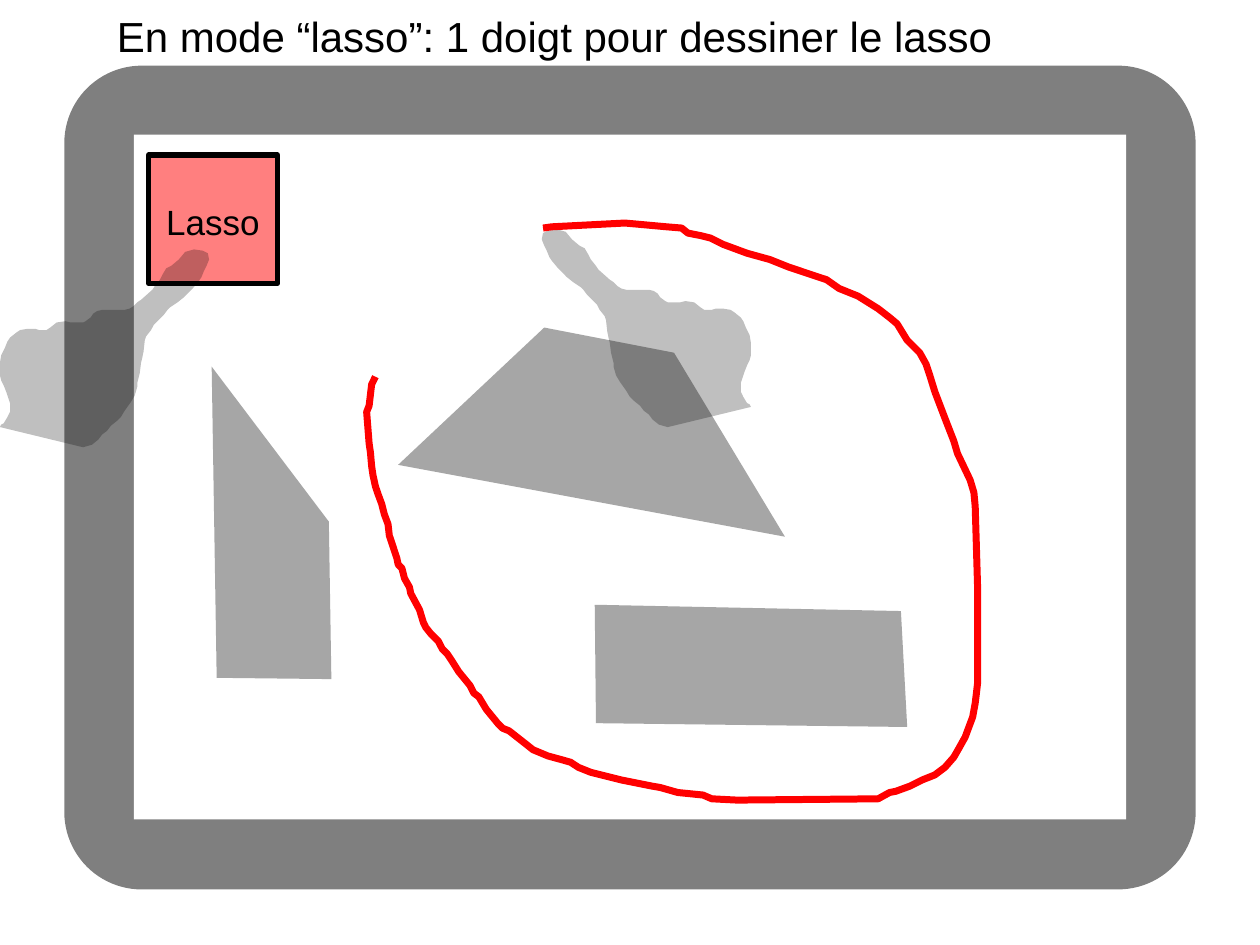
"""Builds the tablet slide on drawing a lasso with one finger."""

import dataclasses
import typing

import lxml.etree
import pptx
import pptx.dml.color
import pptx.enum.shapes
import pptx.enum.text
import pptx.oxml.ns
import pptx.util

Pt = pptx.util.Pt
SHAPE = pptx.enum.shapes.MSO_SHAPE
ALIGN = pptx.enum.text.PP_ALIGN
Points = list[tuple[int, int]]


@dataclasses.dataclass(frozen=True)
class Theme:
    black: str = "000000"
    white: str = "FFFFFF"
    red: str = "FF0000"
    grey: str = "A6A6A6"
    font: str = "Arial"
    title_size: float = 24
    label_size: float = 20
    border: float = 3
    stroke: float = 4
    grid_step: float = 0.72


@dataclasses.dataclass(frozen=True)
class Style:
    fill: typing.Optional[str] = None
    opacity: int = 100
    line: typing.Optional[str] = None
    width: float = 0


@dataclasses.dataclass(frozen=True)
class Panel:
    preset: SHAPE
    box: tuple[float, float, float, float]
    style: Style
    corner: typing.Optional[float] = None


@dataclasses.dataclass(frozen=True)
class Label:
    text: str
    box: tuple[float, float, float, float]
    size: float
    align: ALIGN
    wrap: bool
    side_inset: float = 7.2


@dataclasses.dataclass(frozen=True)
class Outline:
    points: Points
    style: Style
    closed: bool = True


THEME = Theme()
HAND_STYLE = Style(THEME.black, 25)
OBJECT_STYLE = Style(THEME.grey)

TABLET = [
    Panel(SHAPE.ROUNDED_RECTANGLE, (36.75, 37.5, 646.5, 470.75), Style(THEME.black, 50), 0.094),
    Panel(SHAPE.RECTANGLE, (76.5, 77, 567, 391.25), Style(THEME.white)),
]
BUTTON = Panel(SHAPE.RECTANGLE, (85, 88.5, 73.5, 73.5),
               Style(THEME.red, 50, THEME.black, THEME.border))
BUTTON_LABEL = Label("Lasso", (88, 111, 67.5, 31.5), THEME.label_size, ALIGN.CENTER, False, 2)
TITLE = Label("En mode “lasso”: 1 doigt pour dessiner le lasso", (59.75, 2.5, 620, 36.5),
              THEME.title_size, ALIGN.LEFT, True)

DRAWN_OBJECTS = [
    [(172, 538), (168, 291), (261, 414), (263, 539)],
    [(316, 369), (623, 426), (535, 280), (432, 260)],
    [(472, 480), (473, 574), (720, 577), (715, 485)],
]
RIGHT_HAND = [
    (530, 339), (523, 337), (518, 333), (515, 329), (511, 326), (508, 322), (503, 318),
    (500, 315), (497, 310), (492, 303), (489, 298), (487, 291), (487, 288), (485, 280),
    (484, 272), (483, 268), (482, 263), (481, 254), (480, 251), (476, 246), (474, 242),
    (469, 237), (466, 234), (463, 230), (461, 228), (455, 224), (450, 220), (447, 217),
    (443, 213), (438, 207), (436, 204), (434, 199), (432, 195), (430, 190), (431, 185),
    (435, 183), (442, 182), (449, 184), (454, 190), (460, 195), (464, 197), (467, 202),
    (469, 206), (473, 211), (475, 214), (484, 222), (487, 224), (490, 227), (493, 229),
    (497, 230), (506, 230), (515, 230), (519, 231), (522, 233), (524, 236), (528, 239),
    (530, 240), (534, 240), (540, 240), (544, 239), (551, 240), (556, 244), (559, 246),
    (565, 246), (568, 245), (574, 245), (580, 246), (583, 248), (588, 252), (590, 255),
    (592, 260), (595, 266), (596, 272), (596, 282), (595, 286), (593, 290), (591, 295),
    (589, 301), (588, 304), (588, 311), (590, 315), (593, 320), (595, 321), (596, 323),
]
LEFT_HAND = [(596 - x, y + 16) for x, y in RIGHT_HAND]
LASSO = [
    (298, 299), (295, 305), (293, 322), (291, 327), (293, 352), (294, 359), (295, 370),
    (296, 377), (298, 386), (300, 392), (303, 400), (305, 408), (308, 416), (309, 425),
    (311, 431), (315, 443), (316, 448), (319, 451), (321, 459), (325, 466), (326, 471),
    (333, 484), (336, 494), (338, 498), (342, 503), (348, 509), (351, 515), (355, 519),
    (359, 525), (364, 533), (373, 544), (376, 550), (380, 553), (386, 563), (395, 574),
    (399, 578), (404, 580), (418, 591), (423, 595), (435, 600), (446, 603), (453, 605),
    (459, 609), (469, 613), (473, 614), (493, 619), (518, 624), (524, 625), (538, 629),
    (558, 631), (565, 634), (585, 635), (697, 634), (706, 629), (711, 628), (722, 624),
    (732, 619), (742, 615), (750, 609), (757, 601), (761, 594), (766, 585), (772, 569),
    (774, 558), (775, 550), (776, 541), (776, 470), (774, 402), (773, 391), (770, 381),
    (760, 360), (757, 350), (750, 332), (742, 311), (738, 298), (735, 289), (730, 280),
    (720, 270), (712, 257), (706, 252), (697, 245), (681, 235), (666, 229), (656, 222),
    (650, 220), (626, 212), (611, 206), (593, 201), (574, 194), (564, 189), (556, 187),
    (546, 185), (541, 181), (529, 180), (496, 177), (438, 180), (431, 181),
]


def rgb(colour: str) -> pptx.dml.color.RGBColor:
    """Return the colour object for a hex value."""
    return pptx.dml.color.RGBColor.from_string(colour)


def set_format(target: typing.Any, values: dict[str, typing.Any]) -> None:
    """Set each named format value on the target."""
    for name, value in values.items():
        setattr(target, name, value)


def apply_style(shape: typing.Any, style: Style) -> None:
    """Give a shape its fill, opacity and line."""
    shape.shadow.inherit = False
    if style.fill:
        shape.fill.solid()
        shape.fill.fore_color.rgb = rgb(style.fill)
        if style.opacity < 100:
            colour = shape.fill._xPr.find(".//" + pptx.oxml.ns.qn("a:srgbClr"))
            alpha = lxml.etree.SubElement(colour, pptx.oxml.ns.qn("a:alpha"))
            alpha.set("val", str(style.opacity * 1000))
    else:
        shape.fill.background()
    if style.line:
        shape.line.color.rgb = rgb(style.line)
        shape.line.width = Pt(style.width)
    else:
        shape.line.fill.background()


def draw_panel(slide: typing.Any, panel: Panel) -> None:
    """Draw a preset shape."""
    shape = slide.shapes.add_shape(panel.preset, *map(Pt, panel.box))
    if panel.corner is not None:
        shape.adjustments[0] = panel.corner
    apply_style(shape, panel.style)


def draw_outline(slide: typing.Any, outline: Outline) -> None:
    """Draw a freeform whose points count grid steps."""
    builder = slide.shapes.build_freeform(*outline.points[0], scale=Pt(THEME.grid_step))
    builder.add_line_segments(outline.points[1:], close=outline.closed)
    apply_style(builder.convert_to_shape(), outline.style)


def draw_label(slide: typing.Any, label: Label) -> None:
    """Draw a text box holding one line."""
    frame = slide.shapes.add_textbox(*map(Pt, label.box)).text_frame
    set_format(frame, {"word_wrap": label.wrap,
                       "auto_size": pptx.enum.text.MSO_AUTO_SIZE.SHAPE_TO_FIT_TEXT,
                       "margin_left": Pt(label.side_inset),
                       "margin_right": Pt(label.side_inset)})
    paragraph = frame.paragraphs[0]
    paragraph.alignment = label.align
    run = paragraph.add_run()
    run.text = label.text
    set_format(run.font, {"name": THEME.font, "size": Pt(label.size)})
    run.font.color.rgb = rgb(THEME.black)


def main() -> None:
    """Build and save the slide."""
    deck = pptx.Presentation()
    set_format(deck, {"slide_width": Pt(720), "slide_height": Pt(540)})
    slide = deck.slides.add_slide(deck.slide_layouts[6])
    for panel in TABLET:
        draw_panel(slide, panel)
    for points in DRAWN_OBJECTS:
        draw_outline(slide, Outline(points, OBJECT_STYLE))
    draw_panel(slide, BUTTON)
    draw_label(slide, BUTTON_LABEL)
    draw_outline(slide, Outline(RIGHT_HAND, HAND_STYLE))
    draw_label(slide, TITLE)
    draw_outline(slide, Outline(LEFT_HAND, HAND_STYLE))
    draw_outline(slide, Outline(LASSO, Style(line=THEME.red, width=THEME.stroke), False))
    deck.save("out.pptx")


if __name__ == "__main__":
    main()
